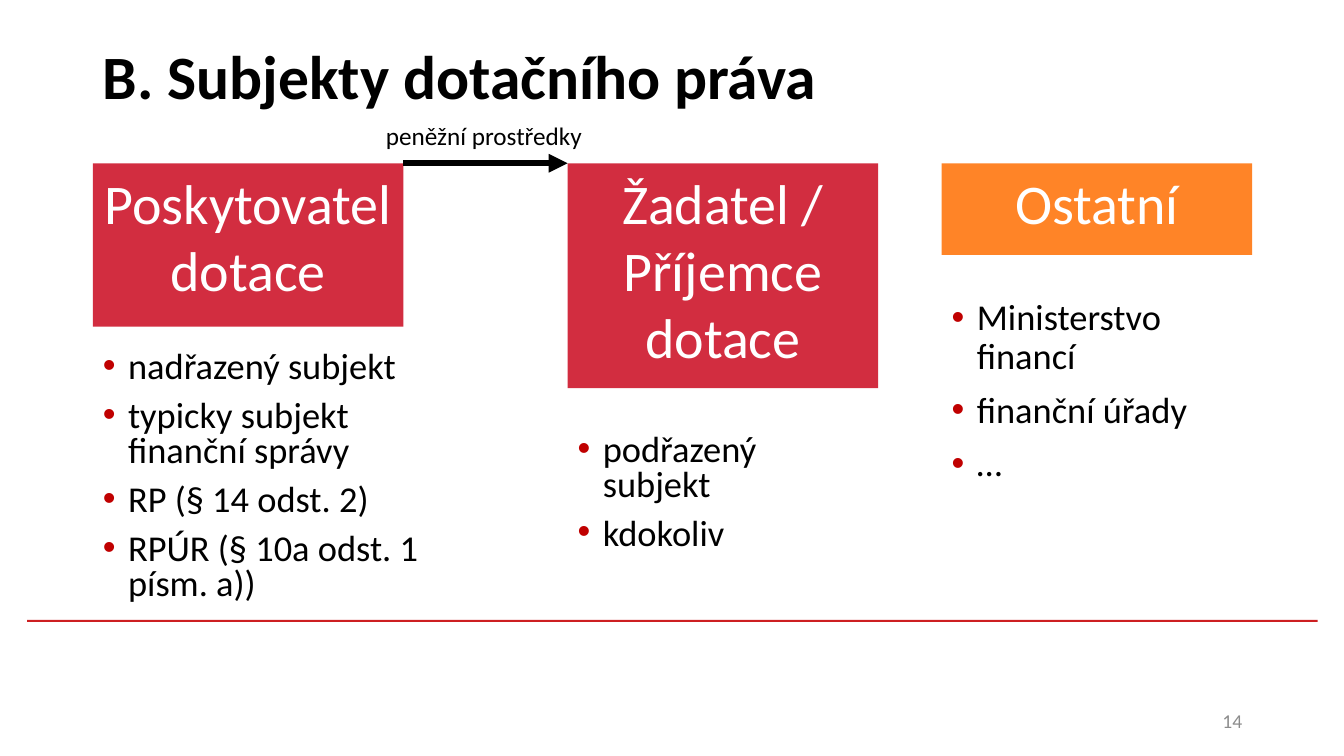
"""Build the slide on the parties of subsidy law."""
from lxml.etree import SubElement
from pptx import Presentation
from pptx.dml.color import RGBColor
from pptx.enum.shapes import MSO_CONNECTOR, MSO_SHAPE
from pptx.enum.text import MSO_ANCHOR, MSO_AUTO_SIZE, PP_ALIGN
from pptx.oxml.ns import qn
from pptx.util import Pt

PX = 9144
SIZE = (1333, 750)
COLORS = {"ink": "000000", "white": "FFFFFF", "gray": "8C8C8C", "rule": "CD1F21",
          "red": "D22D40", "orange": "FF8427", "dot": "C00000"}
TITLE = "B. Subjekty dotačního práva"
FLOW = "peněžní prostředky"
NUMBER = "14"
TOP, WIDE, INDENT = 162, 308, 25
PARTIES = [
    {"name": "Poskytovatel dotace", "left": 92, "high": 162, "fill": "red",
     "list": (344, 346, 270), "space": 0.8,
     "items": ["nadřazený subjekt", "typicky subjekt finanční správy",
               "RP (§ 14 odst. 2)", "RPÚR (§ 10a odst. 1 písm. a))"]},
    {"name": "Žadatel / Příjemce dotace", "left": 563, "high": 223, "fill": "red",
     "list": (426, WIDE, 138), "space": 0.8,
     "items": ["podřazený subjekt", "kdokoliv"]},
    {"name": "Ostatní", "left": 934, "high": 91, "fill": "orange",
     "list": (292, WIDE, 223), "space": 0.9,
     "items": ["Ministerstvo financí", "finanční úřady", "…"]},
]


def emu(*sides):
    return [side * PX for side in sides]


def tint(name):
    return RGBColor.from_string(COLORS[name])


def put(item, values):
    for key, value in values.items():
        setattr(item, key, value)


def place(shape, *box):
    put(shape, dict(zip(("left", "top", "width", "height"), emu(*box))))


def block(box, fill):
    shape = slide.shapes.add_shape(MSO_SHAPE.RECTANGLE, *emu(*box))
    shape.shadow.inherit = False
    shape.fill.solid()
    shape.fill.fore_color.rgb = tint(fill)
    shape.line.fill.background()
    return shape


def write(shape, lines, size, color="ink", align=PP_ALIGN.LEFT,
          anchor=MSO_ANCHOR.TOP, bold=False):
    frame = shape.text_frame
    put(frame, {"word_wrap": True, "auto_size": MSO_AUTO_SIZE.NONE,
                "vertical_anchor": anchor})
    frame.text = "\n".join(lines)
    for para in frame.paragraphs:
        para.alignment = align
        font = para.runs[0].font
        put(font, {"name": "Calibri", "size": Pt(size), "bold": bold})
        font.color.rgb = tint(color)
    return frame.paragraphs


def bullet(paras, space):
    for rank, para in enumerate(paras):
        put(para, {"line_spacing": space, "space_before": Pt(10 if rank else 0)})
        props = para._p.get_or_add_pPr()
        props.set("marL", str(INDENT * PX))
        props.set("indent", str(-INDENT * PX))
        SubElement(SubElement(props, qn("a:buClr")), qn("a:srgbClr"), val=COLORS["dot"])
        SubElement(props, qn("a:buFont"), typeface="Arial")
        SubElement(props, qn("a:buChar"), char="•")


deck = Presentation()
deck.slide_width, deck.slide_height = emu(*SIZE)
slide = deck.slides.add_slide(deck.slide_layouts[1])
title, body = slide.placeholders

block((27, 615, 1280, 2), "rule")
place(title, 92, 2, 1150, 145)
write(title, [TITLE], 44, anchor=MSO_ANCHOR.MIDDLE, bold=True)

for rank, party in enumerate(PARTIES):
    left = party["left"]
    head = block((left, TOP, WIDE, party["high"]), party["fill"])
    write(head, [party["name"]], 40, "white", PP_ALIGN.CENTER)
    top, wide, high = party["list"]
    box = slide.shapes.add_textbox(0, 0, 0, 0) if rank else body
    place(box, left, top, wide, high)
    bullet(write(box, party["items"], 26), party["space"])

start, end = PARTIES[0]["left"] + WIDE, PARTIES[1]["left"]
arrow = slide.shapes.add_connector(MSO_CONNECTOR.STRAIGHT, *emu(start, TOP, end, TOP))
arrow.line.width = Pt(4.5)
arrow.line.color.rgb = tint("ink")
SubElement(arrow.line._get_or_add_ln(), qn("a:tailEnd"), type="triangle")
SubElement(arrow._element.spPr, qn("a:effectLst"))

label = slide.shapes.add_textbox(*emu(299, 114, 362, 40))
write(label, [FLOW], 18, align=PP_ALIGN.CENTER)
number = slide.shapes.add_textbox(*emu(942, 695, 300, 40))
write(number, [NUMBER], 14, "gray", PP_ALIGN.RIGHT, MSO_ANCHOR.MIDDLE)

deck.save("out.pptx")
